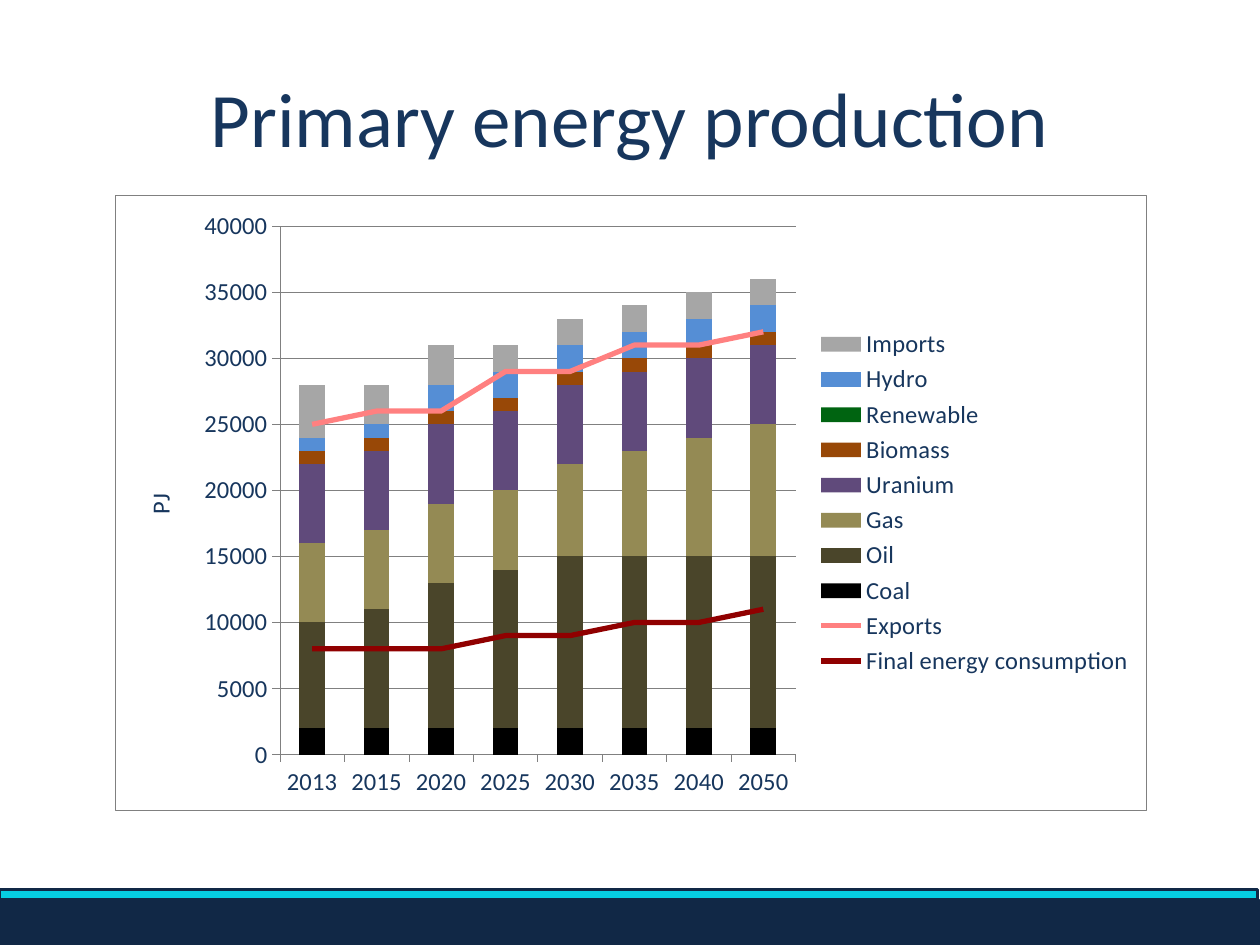
"""Builds a slide with a stacked column and line chart of primary energy production."""
from lxml import etree
from pptx import Presentation
from pptx.chart.data import CategoryChartData
from pptx.dml.color import RGBColor
from pptx.enum.chart import XL_CHART_TYPE, XL_LEGEND_POSITION, XL_TICK_MARK
from pptx.enum.shapes import MSO_SHAPE
from pptx.enum.text import MSO_ANCHOR, PP_ALIGN
from pptx.oxml import parse_xml
from pptx.oxml.ns import nsdecls, qn
from pptx.util import Inches, Pt

STACKED = XL_CHART_TYPE.COLUMN_STACKED
RIGHT = XL_LEGEND_POSITION.RIGHT
OUTSIDE = XL_TICK_MARK.OUTSIDE
RECTANGLE = MSO_SHAPE.RECTANGLE
MIDDLE = MSO_ANCHOR.MIDDLE
CENTER = PP_ALIGN.CENTER

NAVY_TEXT = RGBColor(0x17, 0x36, 0x5D)
NAVY = RGBColor(0x11, 0x28, 0x46)
CYAN = RGBColor(0x06, 0xCD, 0xE2)
GRAY = RGBColor(0x80, 0x80, 0x80)
BLACK = RGBColor(0x00, 0x00, 0x00)
OLIVE = RGBColor(0x4A, 0x45, 0x2A)
KHAKI = RGBColor(0x94, 0x8A, 0x54)
PURPLE = RGBColor(0x60, 0x4A, 0x7B)
BROWN = RGBColor(0x98, 0x48, 0x07)
GREEN = RGBColor(0x00, 0x64, 0x11)
BLUE = RGBColor(0x55, 0x8E, 0xD5)
SILVER = RGBColor(0xA6, 0xA6, 0xA6)
DARK_RED = RGBColor(0x90, 0x00, 0x00)
PINK = RGBColor(0xFF, 0x80, 0x80)

FONT = "Calibri"
TITLE = "Primary energy production"
UNIT = "PJ"
YEARS = ["2013", "2015", "2020", "2025", "2030", "2035", "2040", "2050"]
COLUMNS = [
    ("Coal", BLACK, [2000, 2000, 2000, 2000, 2000, 2000, 2000, 2000]),
    ("Oil", OLIVE, [8000, 9000, 11000, 12000, 13000, 13000, 13000, 13000]),
    ("Gas", KHAKI, [6000, 6000, 6000, 6000, 7000, 8000, 9000, 10000]),
    ("Uranium", PURPLE, [6000, 6000, 6000, 6000, 6000, 6000, 6000, 6000]),
    ("Biomass", BROWN, [1000, 1000, 1000, 1000, 1000, 1000, 1000, 1000]),
    ("Renewable", GREEN, [0, 0, 0, 0, 0, 0, 0, 0]),
    ("Hydro", BLUE, [1000, 1000, 2000, 2000, 2000, 2000, 2000, 2000]),
    ("Imports", SILVER, [4000, 3000, 3000, 2000, 2000, 2000, 2000, 2000]),
]
LINES = [
    ("Final energy consumption", DARK_RED, [8000, 8000, 8000, 9000, 9000, 10000, 10000, 11000]),
    ("Exports", PINK, [17000, 18000, 18000, 20000, 20000, 21000, 21000, 21000]),
]
BANDS = [(0, 7.06, 9.98, 0.08, CYAN, 1.5), (-0.01, 7.14, 10, 0.36, NAVY, 1)]
PLOT_SHARES = {"x": 0.16, "y": 0.05, "w": 0.5, "h": 0.86}


def set_format(target, values):
    for name, value in values.items():
        setattr(target, name, value)


def style_line(line, color, width):
    line.color.rgb = color
    line.width = Pt(width)


def add_title(page):
    box = page.shapes.add_textbox(Inches(0.5), Inches(0.3), Inches(9), Inches(1.25))
    set_format(box.text_frame, {"word_wrap": True, "vertical_anchor": MIDDLE})
    para = box.text_frame.paragraphs[0]
    para.alignment = CENTER
    span = para.add_run()
    span.text = TITLE
    set_format(span.font, {"size": Pt(44), "name": FONT})
    span.font.color.rgb = NAVY_TEXT


def add_bands(page):
    for left, top, width, height, color, border in BANDS:
        band = page.shapes.add_shape(
            RECTANGLE, Inches(left), Inches(top), Inches(width), Inches(height))
        band.shadow.inherit = False
        band.fill.solid()
        band.fill.fore_color.rgb = color
        style_line(band.line, NAVY, border)


def move_to_lines(chart, series_list):
    """Moves the given series from the columns into a stacked line plot."""
    columns = chart.plots[0]
    bar_plot = series_list[0]._element.getparent()
    line_plot = parse_xml(
        f'<c:lineChart {nsdecls("c")}><c:grouping val="stacked"/><c:varyColors val="0"/></c:lineChart>')
    for series in series_list:
        element = series._element
        for flag in element.findall(qn("c:invertIfNegative")):
            element.remove(flag)
        element.find(qn("c:spPr")).addnext(
            parse_xml(f'<c:marker {nsdecls("c")}><c:symbol val="none"/></c:marker>'))
        etree.SubElement(element, qn("c:smooth")).set("val", "0")
        line_plot.append(element)
    etree.SubElement(line_plot, qn("c:marker")).set("val", "1")
    for axis_id in bar_plot.findall(qn("c:axId")):
        etree.SubElement(line_plot, qn("c:axId")).set("val", axis_id.get("val"))
    bar_plot.addnext(line_plot)
    set_format(columns, {"gap_width": 150, "overlap": 100, "vary_by_categories": False})


def place_plot(chart):
    area = chart._chartSpace.find(qn("c:chart")).find(qn("c:plotArea"))
    for layout in area.findall(qn("c:layout")):
        area.remove(layout)
    modes = '<c:layoutTarget val="inner"/><c:xMode val="edge"/><c:yMode val="edge"/>'
    shares = "".join(f'<c:{key} val="{share}"/>' for key, share in PLOT_SHARES.items())
    area.insert(0, parse_xml(
        f'<c:layout {nsdecls("c")}><c:manualLayout>{modes}{shares}</c:manualLayout></c:layout>'))


def frame_chart(chart):
    chart._chartSpace.find(qn("c:chart")).addnext(parse_xml(
        f'<c:spPr {nsdecls("c", "a")}><a:solidFill><a:srgbClr val="FFFFFF"/></a:solidFill>'
        f'<a:ln w="{Pt(0.25)}"><a:solidFill><a:srgbClr val="{GRAY}"/></a:solidFill></a:ln></c:spPr>'))


def style_axes(chart):
    for axis in (chart.category_axis, chart.value_axis):
        set_format(axis, {"major_tick_mark": OUTSIDE})
        style_line(axis.format.line, GRAY, 0.25)
    values = chart.value_axis
    set_format(values, {"minimum_scale": 0, "maximum_scale": 40000, "major_unit": 5000})
    set_format(values.tick_labels, {"number_format": "0", "number_format_is_linked": False})
    style_line(values.major_gridlines.format.line, GRAY, 0.25)
    frame = values.axis_title.text_frame
    frame.text = UNIT
    font = frame.paragraphs[0].runs[0].font
    set_format(font, {"size": Pt(14), "bold": False, "name": FONT})
    font.color.rgb = NAVY_TEXT
    for body in values.axis_title._element.iter(qn("a:bodyPr")):
        body.set("rot", "-5400000")
        body.set("vert", "horz")


def add_energy_chart(page):
    data = CategoryChartData(number_format="0")
    data.categories = YEARS
    for name, _, values in COLUMNS + LINES:
        data.add_series(name, values)
    chart = page.shapes.add_chart(
        STACKED, Inches(0.91), Inches(1.55), Inches(8.19), Inches(4.88), data).chart
    set_format(chart, {"has_title": False, "has_legend": True})
    set_format(chart.font, {"size": Pt(14), "name": FONT})
    chart.font.color.rgb = NAVY_TEXT
    set_format(chart.legend, {"position": RIGHT, "include_in_layout": False})
    all_series = list(chart.plots[0].series)
    for series, (_, color, _) in zip(all_series, COLUMNS):
        series.format.fill.solid()
        series.format.fill.fore_color.rgb = color
    line_series = all_series[len(COLUMNS):]
    for series, (_, color, _) in zip(line_series, LINES):
        style_line(series.format.line, color, 3)
    move_to_lines(chart, line_series)
    style_axes(chart)
    place_plot(chart)
    frame_chart(chart)


def main():
    deck = Presentation()
    set_format(deck, {"slide_width": Inches(10), "slide_height": Inches(7.5)})
    page = deck.slides.add_slide(deck.slide_layouts[6])
    add_title(page)
    add_bands(page)
    add_energy_chart(page)
    deck.save("out.pptx")


if __name__ == "__main__":
    main()
